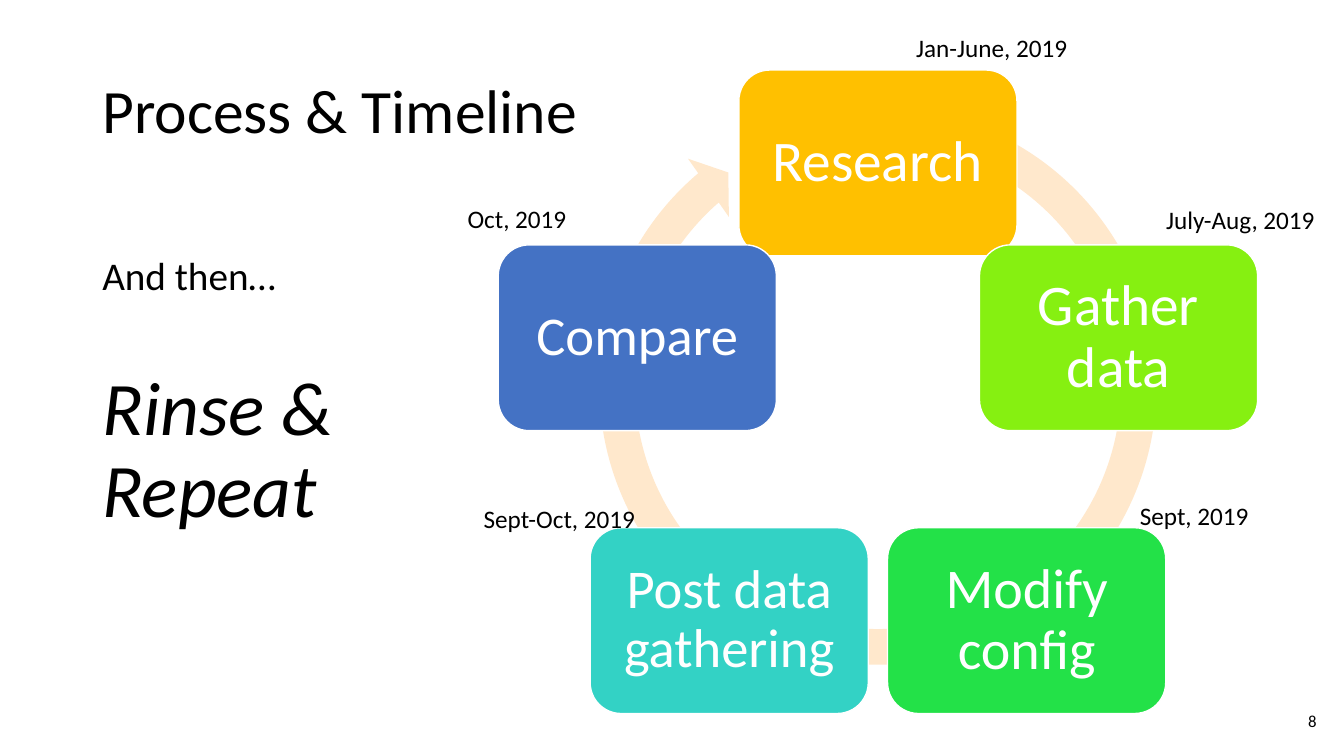
"""Build the process and timeline slide with its five-step cycle."""
from dataclasses import dataclass
from math import cos, pi, sin

from pptx import Presentation
from pptx.dml.color import RGBColor
from pptx.enum.shapes import MSO_SHAPE
from pptx.enum.text import MSO_ANCHOR, MSO_AUTO_SIZE, PP_ALIGN
from pptx.shapes.autoshape import Shape
from pptx.slide import Slide
from pptx.text.text import TextFrame, _Paragraph
from pptx.util import Inches, Length, Pt

COLUMNS, ROWS = 80, 45
CELL = Inches(1 / 6)
FONT = "Calibri"
BLACK = RGBColor(0x00, 0x00, 0x00)
WHITE = RGBColor(0xFF, 0xFF, 0xFF)
PEACH = RGBColor(0xFF, 0xE8, 0xCC)
AMBER = RGBColor(0xFF, 0xC0, 0x00)
LIME = RGBColor(0x86, 0xF0, 0x11)
GREEN = RGBColor(0x23, 0xE1, 0x48)
TURQUOISE = RGBColor(0x33, 0xD2, 0xC5)
BLUE = RGBColor(0x44, 0x72, 0xC4)

CYCLE_COLUMN, CYCLE_ROW, CYCLE_RADIUS = 52.26, 24.76, 15.06
STEP_WIDTH, STEP_HEIGHT, STEP_INSET = 16.56, 11.06, 1
ARROW_ADJUSTMENTS = (0.06, 3.31, 137.68, 173.91, 0.06)


@dataclass(frozen=True)
class Area:
    """A rectangle in grid columns and rows."""

    column: float
    row: float
    width: float
    height: float

    def lengths(self) -> tuple[Length, ...]:
        """Return left, top, width and height as slide lengths."""
        return tuple(Length(round(CELL * cells)) for cells in
                     (self.column, self.row, self.width, self.height))


@dataclass(frozen=True)
class Step:
    """A step of the cycle with its date label."""

    name: str
    size: int
    color: RGBColor
    date: str
    date_area: Area


TITLE_AREA = Area(5.5, 2.4, 69, 8.7)
BODY_AREA = Area(5.5, 15, 21, 29.04)
NUMBER_AREA = Area(56.5, 41.7, 22.46, 2.4)
ARROW_AREA = Area(34.62, 5.34, 35.28, 35.28)
STEPS = (
    Step("Research", 41, AMBER, "Jan-June, 2019", Area(53.94, 1.62, 10.32, 2.4)),
    Step("Gather data", 41, LIME, "July-Aug, 2019", Area(68.82, 11.88, 10.2, 2.4)),
    Step("Modify config", 40, GREEN, "Sept, 2019", Area(67.26, 29.46, 7.74, 2.4)),
    Step("Post data gathering", 39, TURQUOISE, "Sept-Oct, 2019", Area(28.2, 29.64, 10.38, 2.4)),
    Step("Compare", 39, BLUE, "Oct, 2019", Area(27.24, 11.82, 7.14, 2.4)),
)


def format_paragraph(paragraph: _Paragraph, size: int, color: RGBColor = BLACK,
                     alignment: PP_ALIGN = PP_ALIGN.LEFT, spacing: float = 1.0) -> None:
    """Set the alignment, spacing and run fonts of a paragraph."""
    paragraph.alignment = alignment
    paragraph.line_spacing = spacing
    for run in paragraph.runs:
        run.font.name = FONT
        run.font.size = Pt(size)
        run.font.color.rgb = color


def add_title(slide: Slide, text: str) -> None:
    """Place and format the title placeholder."""
    title = slide.shapes.title
    title.left, title.top, title.width, title.height = TITLE_AREA.lengths()
    frame = title.text_frame
    frame.text = text
    frame.auto_size = MSO_AUTO_SIZE.NONE
    frame.vertical_anchor = MSO_ANCHOR.MIDDLE
    format_paragraph(frame.paragraphs[0], 44, spacing=0.9)


def add_text(slide: Slide, area: Area, text: str, wrap: bool = True) -> TextFrame:
    """Add a text box and return its text frame."""
    frame = slide.shapes.add_textbox(*area.lengths()).text_frame
    frame.text = text
    frame.word_wrap = wrap
    return frame


def add_filled_shape(slide: Slide, kind: MSO_SHAPE, area: Area, color: RGBColor) -> Shape:
    """Add a preset shape with a plain fill and no shadow."""
    shape = slide.shapes.add_shape(kind, *area.lengths())
    shape.shadow.inherit = False
    shape.fill.solid()
    shape.fill.fore_color.rgb = color
    return shape


def add_cycle_arrow(slide: Slide) -> None:
    """Add the circular arrow behind the steps."""
    arrow = add_filled_shape(slide, MSO_SHAPE.CIRCULAR_ARROW, ARROW_AREA, PEACH)
    arrow.line.fill.background()
    for index, value in enumerate(ARROW_ADJUSTMENTS):
        arrow.adjustments[index] = value


def add_step(slide: Slide, step: Step, angle: float) -> None:
    """Add a step box at a clockwise angle from the top of the cycle."""
    area = Area(CYCLE_COLUMN + CYCLE_RADIUS * sin(angle) - STEP_WIDTH / 2,
                CYCLE_ROW - CYCLE_RADIUS * cos(angle) - STEP_HEIGHT / 2,
                STEP_WIDTH, STEP_HEIGHT)
    box = add_filled_shape(slide, MSO_SHAPE.ROUNDED_RECTANGLE, area, step.color)
    box.line.color.rgb = WHITE
    box.line.width = Pt(1)
    frame = box.text_frame
    frame.text = step.name
    frame.word_wrap = True
    frame.vertical_anchor = MSO_ANCHOR.MIDDLE
    inset = Length(CELL * STEP_INSET)
    frame.margin_left = frame.margin_right = inset
    frame.margin_top = frame.margin_bottom = inset
    format_paragraph(frame.paragraphs[0], step.size, WHITE, PP_ALIGN.CENTER, 0.9)


def add_date(slide: Slide, step: Step) -> None:
    """Add the date label of a step."""
    frame = add_text(slide, step.date_area, step.date, wrap=False)
    frame.auto_size = MSO_AUTO_SIZE.SHAPE_TO_FIT_TEXT
    format_paragraph(frame.paragraphs[0], 18)


def add_body(slide: Slide) -> None:
    """Add the closing remark at the left."""
    remark, motto = add_text(slide, BODY_AREA, "And then…\nRinse & Repeat").paragraphs
    format_paragraph(remark, 28, spacing=0.9)
    format_paragraph(motto, 54, spacing=0.9)
    motto.space_before = Pt(51)
    motto.runs[0].font.italic = True


def add_number(slide: Slide) -> None:
    """Add the slide number at the lower right."""
    frame = add_text(slide, NUMBER_AREA, "8")
    frame.vertical_anchor = MSO_ANCHOR.MIDDLE
    format_paragraph(frame.paragraphs[0], 12, alignment=PP_ALIGN.RIGHT)


def main() -> None:
    """Build and save the presentation."""
    presentation = Presentation()
    presentation.slide_width = Length(CELL * COLUMNS)
    presentation.slide_height = Length(CELL * ROWS)
    slide = presentation.slides.add_slide(presentation.slide_layouts[5])
    add_title(slide, "Process & Timeline")
    add_number(slide)
    add_cycle_arrow(slide)
    for index, step in enumerate(STEPS):
        add_step(slide, step, 2 * pi * index / len(STEPS))
    for step in STEPS:
        add_date(slide, step)
    add_body(slide)
    presentation.save("out.pptx")


if __name__ == "__main__":
    main()
